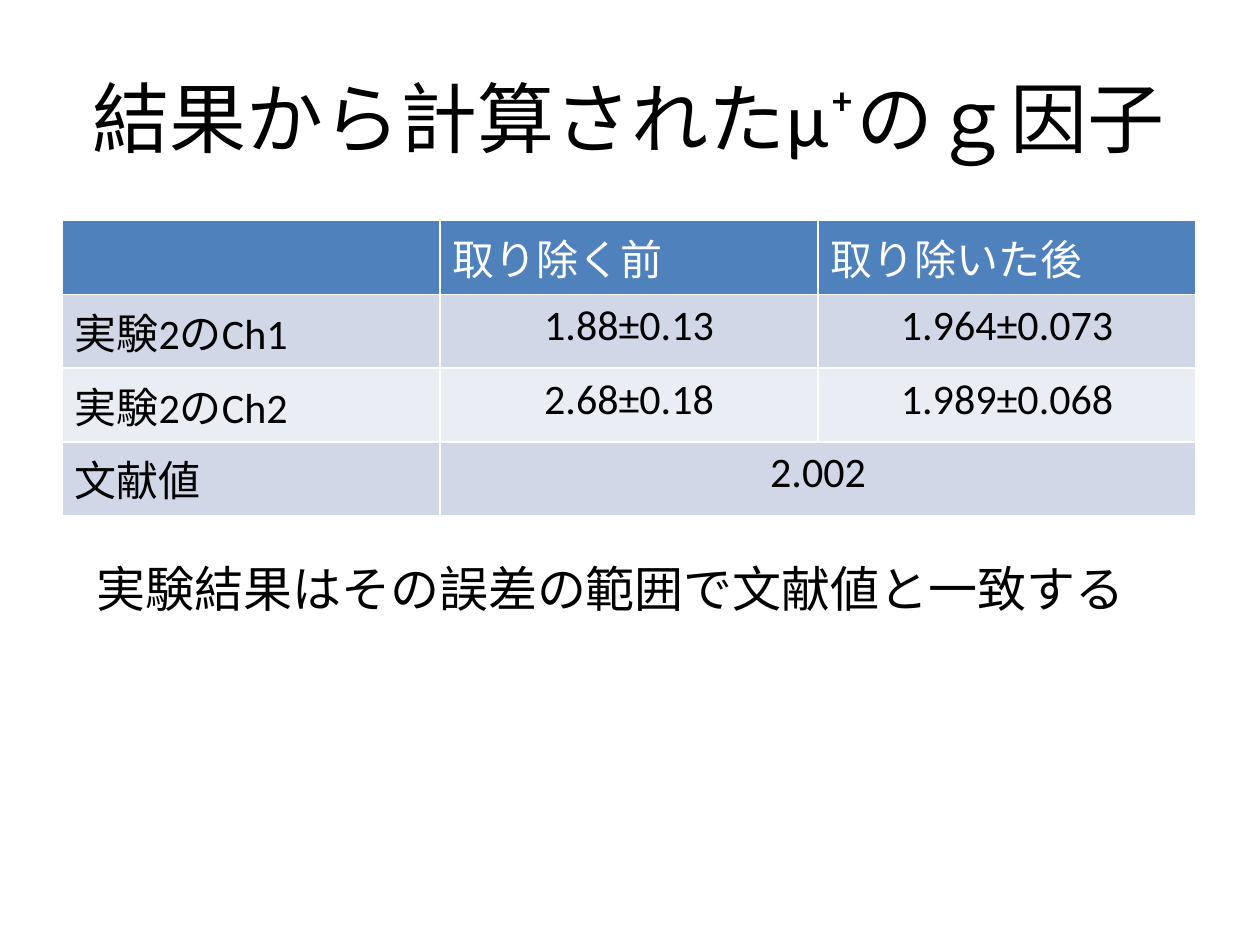
from dataclasses import dataclass
from pptx import Presentation
from pptx.dml.color import RGBColor as RGB
from pptx.enum.text import MSO_ANCHOR as Anchor, MSO_AUTO_SIZE as Fit, PP_ALIGN as Align
from pptx.util import Pt


@dataclass
class Theme:
    font: str = "Calibri"
    ink: RGB = RGB(0, 0, 0)
    white: RGB = RGB(255, 255, 255)
    head: RGB = RGB(0x4F, 0x81, 0xBD)
    bands: tuple = (RGB(0xD0, 0xD8, 0xE8), RGB(0xE9, 0xED, 0xF4))
    title: int = 44
    cell: int = 24
    note: int = 28


theme = Theme()


def write(frame, text, size, color, align):
    par = frame.paragraphs[0]
    par.alignment = align
    run = par.add_run()
    run.text = text
    font = run.font
    font.name, font.size, font.bold = theme.font, Pt(size), False
    font.color.rgb = color


deck = Presentation()
deck.slide_width, deck.slide_height = Pt(720), Pt(540)
slide = deck.slides.add_slide(deck.slide_layouts[5])
left, width = 35.5, 648

# Title
title = slide.shapes.title
title.left, title.top, title.width, title.height = Pt(left), Pt(21.6), Pt(width), Pt(90)
frame = title.text_frame
frame.auto_size, frame.vertical_anchor = Fit.NONE, Anchor.MIDDLE
write(frame, "結果から計算されたμ⁺のｇ因子", theme.title, theme.ink, Align.CENTER)

# Table of g-factors
rows = [
    ["", "取り除く前", "取り除いた後"],
    ["実験2のCh1", "1.88±0.13", "1.964±0.073"],
    ["実験2のCh2", "2.68±0.18", "1.989±0.068"],
    ["文献値", "2.002", ""],
]
table = slide.shapes.add_table(
    len(rows), len(rows[0]), Pt(left), Pt(126), Pt(width), Pt(159)).table
for r, row in enumerate(rows):
    table.rows[r].height = Pt(38.9 if r else 42.4)
    for c, text in enumerate(row):
        cell = table.cell(r, c)
        cell.fill.solid()
        cell.fill.fore_color.rgb = theme.bands[(r - 1) % 2] if r else theme.head
        if text:
            write(cell.text_frame, text, theme.cell,
                  theme.ink if r else theme.white,
                  Align.CENTER if r and c else Align.LEFT)

# The literature value covers both result columns
table.cell(3, 1).merge(table.cell(3, 2))

# Conclusion
note = slide.shapes.add_textbox(Pt(48.2), Pt(315.4), Pt(607.7), Pt(41.2))
frame = note.text_frame
frame.word_wrap, frame.auto_size = True, Fit.SHAPE_TO_FIT_TEXT
write(frame, "実験結果はその誤差の範囲で文献値と一致する", theme.note, theme.ink, Align.LEFT)

deck.save("out.pptx")
